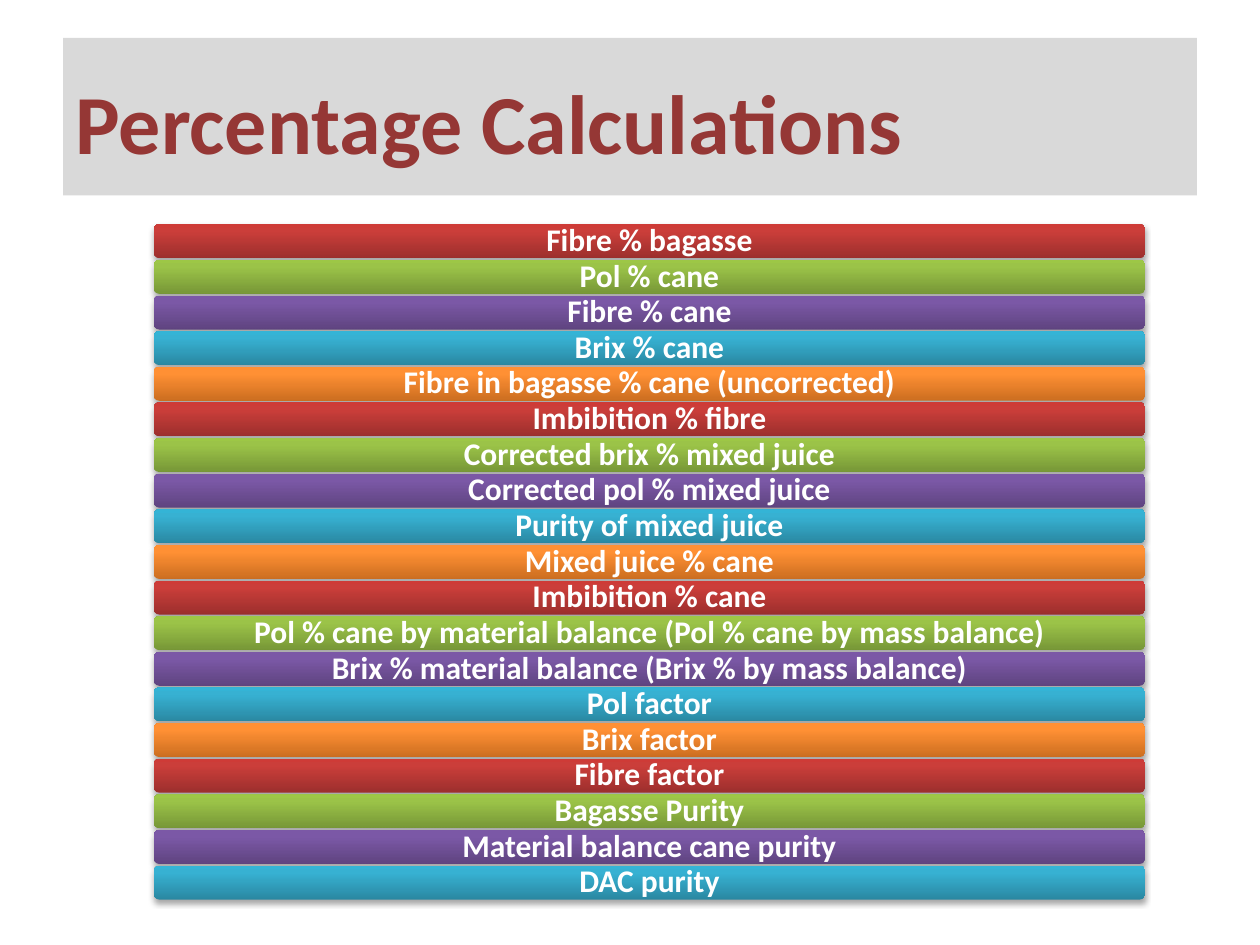
from lxml import etree
from pptx import Presentation
from pptx import util as u
from pptx.dml.color import RGBColor
from pptx.enum import shapes, text
from pptx.oxml import parse_xml
from pptx.oxml.ns import nsdecls, qn

COLORS = {"band": "D9D9D9", "title": "953735", "label": "FFFFFF", "shadow": "000000"}
GRADIENTS = {
    "red": ("9C2F2D", "CB3E3A", "CE3B37"),
    "green": ("779737", "9BC348", "9DC746"),
    "purple": ("5F4480", "7B58A6", "7C57A8"),
    "blue": ("2A88A2", "37B1D2", "34B4D6"),
    "orange": ("CC6E20", "FF9034", "FF9136"),
}
STOPS = (0, 80, 100)
CALCULATIONS = [
    "Fibre % bagasse",
    "Pol % cane",
    "Fibre % cane",
    "Brix % cane",
    "Fibre in bagasse % cane (uncorrected)",
    "Imbibition % fibre",
    "Corrected brix % mixed juice",
    "Corrected pol % mixed juice",
    "Purity of mixed juice",
    "Mixed juice % cane",
    "Imbibition % cane",
    "Pol % cane by material balance (Pol % cane by mass balance)",
    "Brix % material balance (Brix % by mass balance)",
    "Pol factor",
    "Brix factor",
    "Fibre factor",
    "Bagasse Purity",
    "Material balance cane purity",
    "DAC purity",
]


def set_attrs(obj, values):
    """Set each named attribute of an object."""
    for name, value in values.items():
        setattr(obj, name, value)


def write_text(sp, words, size, color, align, frame):
    """Write one bold paragraph into a shape."""
    tf = sp.text_frame
    set_attrs(tf, {"word_wrap": True, "auto_size": text.MSO_AUTO_SIZE.NONE,
                   "vertical_anchor": text.MSO_ANCHOR.MIDDLE, **frame})
    p = tf.paragraphs[0]
    p.alignment = align
    r = p.add_run()
    r.text = words
    set_attrs(r.font, {"name": "Calibri", "size": u.Pt(size), "bold": True})
    r.font.color.rgb = RGBColor.from_string(color)
    return p


def paint_bar(sp, gradient):
    """Give a bar its three-stop gradient and soft shadow."""
    sp.line.fill.background()
    sp.fill.gradient()
    sp.fill.gradient_angle = 90
    stops = sp._element.spPr.find(qn("a:gradFill")).find(qn("a:gsLst"))
    for old in list(stops):
        stops.remove(old)
    for pos, color in zip(STOPS, gradient):
        gs = etree.SubElement(stops, qn("a:gs"), pos=str(pos * 1000))
        etree.SubElement(gs, qn("a:srgbClr"), val=color)
    sp._element.spPr.append(parse_xml(
        f'<a:effectLst {nsdecls("a")}><a:outerShdw blurRad="{u.Pt(3.1)}" '
        f'dist="{u.Pt(1.8)}" dir="5400000" rotWithShape="0">'
        f'<a:srgbClr val="{COLORS["shadow"]}"><a:alpha val="35000"/></a:srgbClr>'
        '</a:outerShdw></a:effectLst>'))


def add_title(s, words, left, top, width, height):
    """Place the title placeholder as a grey band."""
    sp = s.shapes.title
    set_attrs(sp, {"left": left, "top": top, "width": width, "height": height})
    sp.fill.solid()
    sp.fill.fore_color.rgb = RGBColor.from_string(COLORS["band"])
    write_text(sp, words, 48, COLORS["title"], text.PP_ALIGN.LEFT,
               {"margin_top": u.Inches(0.12)})


def add_bars(s, labels, left, top, width, height):
    """Stack evenly spaced bars that cycle through the gradients."""
    bar = u.Inches(0.27)
    step = (height - bar) / (len(labels) - 1)
    gradients = list(GRADIENTS.values())
    inset = u.Inches(0.07)
    frame = {f"margin_{side}": inset for side in ("left", "top", "right", "bottom")}
    for i, label in enumerate(labels):
        sp = s.shapes.add_shape(shapes.MSO_SHAPE.ROUNDED_RECTANGLE,
                                left, round(top + i * step), width, bar)
        paint_bar(sp, gradients[i % len(gradients)])
        p = write_text(sp, label, 18, COLORS["label"], text.PP_ALIGN.CENTER, frame)
        p.line_spacing = 0.9


def main():
    """Build the slide and save it."""
    prs = Presentation()
    set_attrs(prs, {"slide_width": u.Inches(10), "slide_height": u.Inches(7.5)})
    s = prs.slides.add_slide(prs.slide_layouts.get_by_name("Title Only"))
    add_title(s, "Percentage Calculations",
              u.Inches(0.5), u.Inches(0.3), u.Inches(9), u.Inches(1.25))
    add_bars(s, CALCULATIONS,
             u.Inches(1.22), u.Inches(1.78), u.Inches(7.87), u.Inches(5.36))
    prs.save("out.pptx")


if __name__ == "__main__":
    main()
